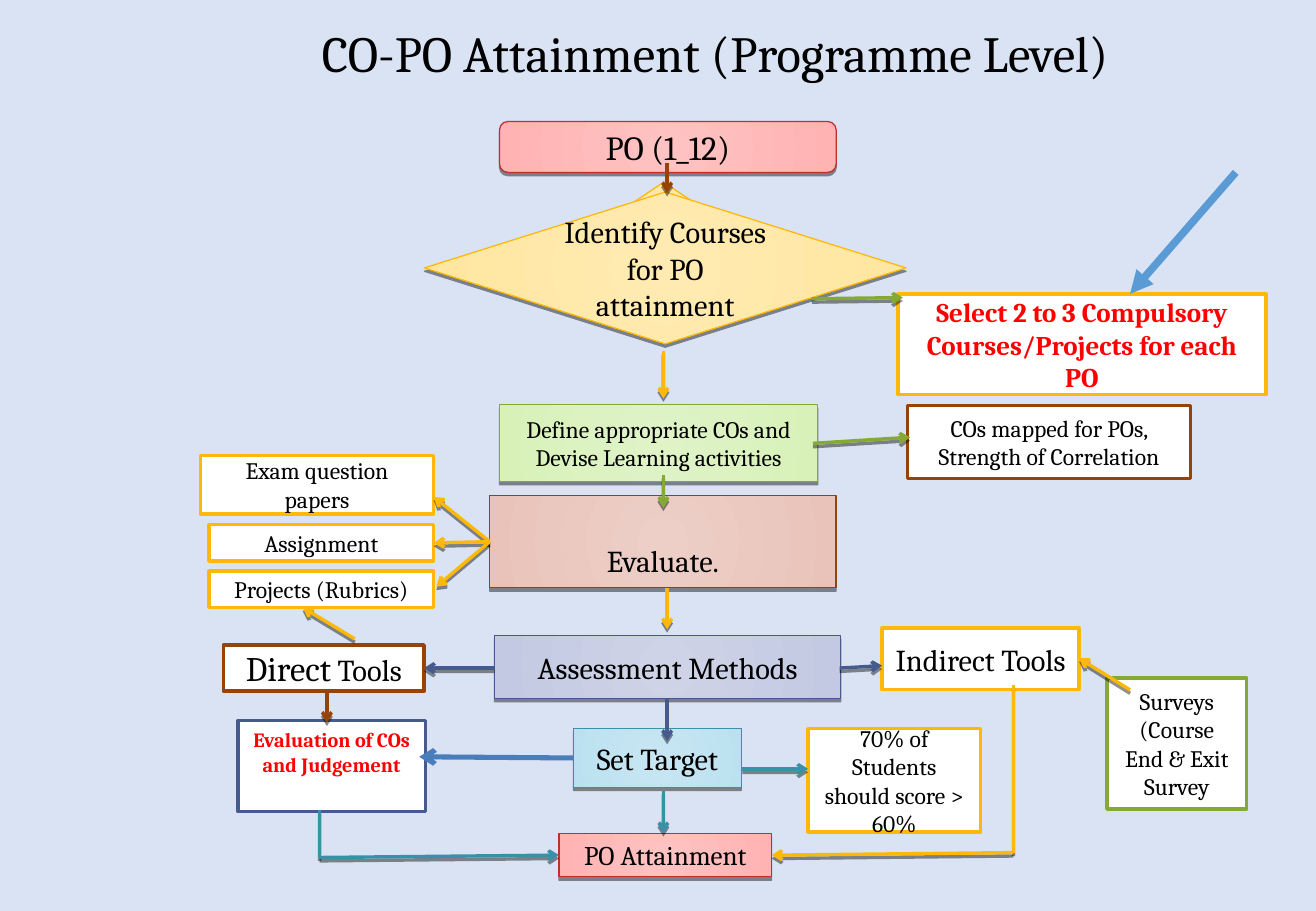
from itertools import pairwise
from pptx import Presentation
from pptx.dml.color import RGBColor as RGB
from pptx.enum.shapes import MSO_CONNECTOR as LINK, MSO_SHAPE as FORM
from pptx.enum.text import MSO_ANCHOR as ANCHOR, PP_ALIGN as ALIGN
from pptx.oxml import parse_xml
from pptx.oxml.ns import nsdecls, qn
from pptx.util import Pt

# Content
TITLE = "CO-PO Attainment (Programme Level)"

HEX = {
    "page": "DAE3F3", "white": "FFFFFF", "black": "000000", "alert": "FF0000",
    "red": "C32D2E", "gold": "FEB80A", "green": "84AA33", "brown": "964305",
    "navy": "475A8D", "teal": "3891A7", "blue": "4A7EBB", "sky": "5B9BD5",
}
GLOW = {  # centre and edge of each soft fill, by line colour
    "red": ("FFC2C2", "FFB3B3"), "gold": ("FFEAB2", "FFE69F"),
    "green": ("DFF3C7", "D8F1B9"), "brown": ("EDCFC8", "E9C3BA"),
    "navy": ("CED3E7", "C3C9E2"), "teal": ("C8E6F2", "BBE1F0"),
}

# Steps of the flow: form, colour, (left, top, width, height), size, lines, frame
STEPS = [
    (FORM.ROUNDED_RECTANGLE, "red", (296, 72, 199.5, 30.2), 20, ["PO (1_12)"], {}),
    (FORM.DIAMOND, "gold", (323.4, 108, 139.7, 93.6), 18, [], {}),
    (FORM.DIAMOND, "gold", (251.5, 113.8, 285.4, 90), 18,
     ["Identify Courses for PO attainment"], {}),
    (FORM.RECTANGLE, "green", (296, 240, 188.6, 45.4), 14,
     ["Define appropriate COs and", "Devise Learning activities"], {}),
    (FORM.RECTANGLE, "brown", (290.2, 293.8, 205.2, 54.7), 18, ["Evaluate."],
     {"margin_top": Pt(26)}),
    (FORM.RECTANGLE, "navy", (293, 376.6, 205.2, 37.4), 18, ["Assessment Methods"], {}),
    (FORM.RECTANGLE, "teal", (339.8, 432, 99.4, 34.6), 18, ["Set Target"], {}),
    (FORM.RECTANGLE, "red", (331.2, 493.9, 126, 25.9), 16, ["PO Attainment"], {}),
]

# White side notes: colour, place, runs as (text, size), font, frame
LOUD = {"bold": True, "ink": "alert"}
NOTES = [
    ("gold", (532, 174.2, 218.2, 59.8),
     [("Select 2 to 3 Compulsory Courses/Projects for each PO", 16)], LOUD, {}),
    ("brown", (132.5, 382.3, 118.8, 27.4), [("Direct", 20.4), (" Tools", 18)], {}, {}),
    ("gold", (522.7, 372.2, 116.6, 36.7), [("Indirect Tools", 18)], {}, {}),
    ("brown", (537.8, 240.5, 167.8, 43.2),
     [("COs mapped for POs, Strength of Correlation", 14)], {}, {}),
    ("gold", (118.8, 270, 138.2, 34.6), [("Exam question papers", 14)], {}, {}),
    ("gold", (123.8, 311, 133.2, 21.6), [("Assignment", 14)], {}, {}),
    ("gold", (123.8, 338.4, 133.2, 21.6), [("Projects (Rubrics)", 14)], {}, {}),
    ("navy", (141.1, 427, 110.9, 54), [("Evaluation of COs and Judgement", 12)],
     LOUD, {"margin_bottom": Pt(20)}),
    ("green", (655.9, 401.8, 82.8, 77.8), [("Surveys (Course End & Exit Survey", 14)], {}, {}),
    ("gold", (478.8, 432, 102.2, 61.2),
     [("70% of Students should score > 60%", 14)], {}, {}),
]

# Arrows: colour and the points they pass through
FAN = (290.2, 321.1)
ARROWS = [
    ("brown", (395.3, 96.5), (395.3, 114.5)),
    ("gold", (393.1, 208), (393.1, 236.2)),
    ("green", (393.1, 281.5), (393.1, 301)),
    ("gold", (395.3, 348.5), (395.3, 373)),
    ("navy", (293, 396), (251.3, 396)),
    ("navy", (497.5, 396), (522.7, 394.6)),
    ("gold", (669.6, 409), (639.4, 390.2)),
    ("navy", (395.3, 414), (395.3, 439.2)),
    ("brown", (193.7, 409), (193.7, 428.4)),
    *[("gold", FAN, end) for end in ((257, 294.5), (257, 321.8), (258.5, 347.8))],
    ("green", (481.7, 262.8), (539.3, 259.2)),
    ("green", (481, 177.1), (535, 176.4)),
    ("teal", (439.9, 455.8), (478.8, 455.8)),
    ("teal", (393.1, 468.7), (393.1, 493.9)),
    ("teal", (189.4, 480.2), (189.4, 508.3), (331.2, 506.9)),
    ("gold", (600.5, 406), (600.5, 505.4), (457.2, 506.9)),
    ("gold", (210.2, 378.7), (179.3, 360)),
]
PLAIN = [  # without shadow: colour, width, head, start, end
    ("blue", 3, "arrow", (339.8, 449.3), (248.4, 448.6)),
    ("sky", 4.5, "triangle", (732.2, 102.2), (669.6, 174.2)),
]

deck = Presentation()
deck.slide_width, deck.slide_height = Pt(779.76), Pt(540)
slide = deck.slides.add_slide(deck.slide_layouts[6])
slide.background.fill.solid()
slide.background.fill.fore_color.rgb = RGB.from_string(HEX["page"])


def shade(item):
    """Hard shadow two points below the item."""
    props = item._element.spPr
    for old in props.findall(qn("a:effectLst")):
        props.remove(old)
    props.append(parse_xml(
        f'<a:effectLst {nsdecls("a")}><a:outerShdw blurRad="0" dist="{Pt(2)}" '
        'dir="5400000" rotWithShape="0"><a:srgbClr val="000000">'
        '<a:alpha val="43000"/></a:srgbClr></a:outerShdw></a:effectLst>'))


def write(item, rows, look={}, frame={}):
    """Each row is a list of (text, size) runs."""
    body = item.text_frame
    for key, val in {"word_wrap": True, "vertical_anchor": ANCHOR.MIDDLE, **frame}.items():
        setattr(body, key, val)
    form = {"name": "Cambria", "bold": False, "ink": "black", **look}
    ink = form.pop("ink")
    for i, row in enumerate(rows):
        para = body.add_paragraph() if i else body.paragraphs[0]
        para.alignment = ALIGN.CENTER
        for text, size in row:
            run = para.add_run()
            run.text = text
            for key, val in {**form, "size": Pt(size)}.items():
                setattr(run.font, key, val)
            run.font.color.rgb = RGB.from_string(HEX[ink])


def edge(item, tone, width):
    item.line.color.rgb = RGB.from_string(HEX[tone])
    item.line.width = Pt(width)


def block(form, tone, place, width):
    item = slide.shapes.add_shape(form, *map(Pt, place))
    item.shadow.inherit = False
    edge(item, tone, width)
    return item


def glow(item, tone):
    """Round gradient from the centre outwards."""
    item.fill.gradient()
    for stop, tint in zip(item.fill.gradient_stops, GLOW[tone]):
        stop.color.rgb = RGB.from_string(tint)
    grad = item._element.spPr.find(qn("a:gradFill"))
    grad.remove(grad.find(qn("a:lin")))
    grad.append(parse_xml(
        f'<a:path {nsdecls("a")} path="circle">'
        '<a:fillToRect l="50000" t="50000" r="50000" b="50000"/></a:path>'))


def link(tone, width, head, start, end, dark):
    item = slide.shapes.add_connector(LINK.STRAIGHT, *map(Pt, (*start, *end)))
    edge(item, tone, width)
    if head:
        item.line._ln.append(parse_xml(f'<a:tailEnd {nsdecls("a")} type="{head}"/>'))
    if dark:
        shade(item)
    else:
        item._element.spPr.append(parse_xml(f'<a:effectLst {nsdecls("a")}/>'))


# Title
head = slide.shapes.add_textbox(*map(Pt, (124.6, 12.2, 598.3, 41.8)))
write(head, [[(TITLE, 30)]])
head.text_frame.paragraphs[0].line_spacing = 0.9

# Flow steps
for form, tone, place, size, lines, frame in STEPS:
    step = block(form, tone, place, 0.75)
    glow(step, tone)
    shade(step)
    write(step, [[(line, size)] for line in lines], frame=frame)

# Side notes
for tone, place, runs, look, frame in NOTES:
    note = block(FORM.RECTANGLE, tone, place, 2)
    note.fill.solid()
    note.fill.fore_color.rgb = RGB.from_string(HEX["white"])
    write(note, [runs], look, frame)

# Arrows, with a head on the last leg only
for tone, *stops in ARROWS:
    for start, end in pairwise(stops):
        link(tone, 2, "arrow" if end == stops[-1] else None, start, end, True)
for tone, width, tip, start, end in PLAIN:
    link(tone, width, tip, start, end, False)

deck.save("out.pptx")
